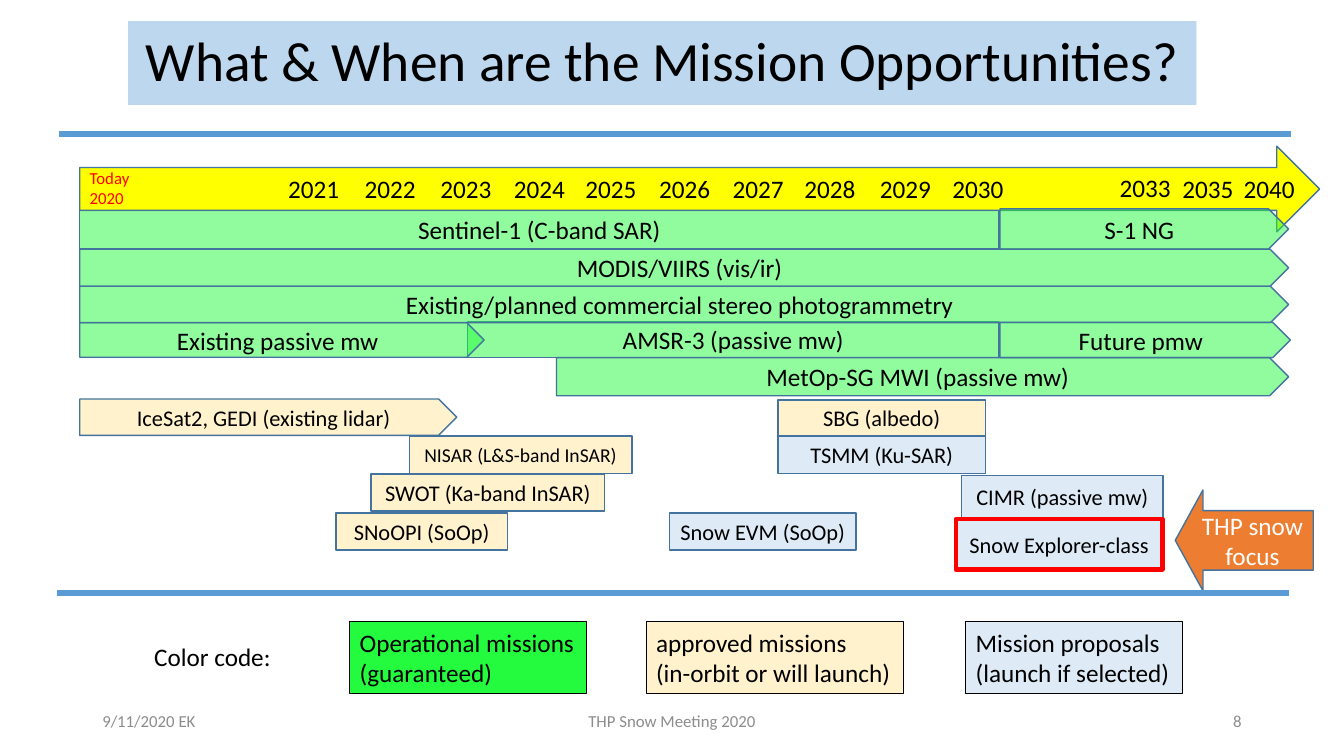
from dataclasses import dataclass
from lxml.etree import SubElement
from pptx import Presentation
from pptx.dml.color import RGBColor
from pptx.enum.shapes import MSO_CONNECTOR, MSO_SHAPE
from pptx.enum.text import MSO_ANCHOR, PP_ALIGN
from pptx.oxml.ns import qn
from pptx.util import Pt


@dataclass(frozen=True)
class Theme:
    font: str = "Calibri"
    black: str = "000000"
    white: str = "FFFFFF"
    red: str = "FF0000"
    gray: str = "8C8C8C"
    green: str = "25FB3E"
    cream: str = "FFF2CC"
    pale: str = "DEEBF7"
    sky: str = "BDD7EE"
    yellow: str = "FFFF00"
    orange: str = "ED7D31"
    edge: str = "43739E"
    rule: str = "5B9BD5"
    head: float = 39.6
    body: float = 18
    box: float = 16
    tight: float = 14
    small: float = 12


class Board:
    def __init__(self, slide, theme):
        self.slide, self.theme = slide, theme

    def text(self, shape, words, size, color=None, align=PP_ALIGN.CENTER,
             anchor=MSO_ANCHOR.MIDDLE, wrap=True, space=None):
        frame = shape.text_frame
        frame.text = words
        for key, value in {"word_wrap": wrap, "vertical_anchor": anchor}.items():
            setattr(frame, key, value)
        style = {"name": self.theme.font, "size": Pt(size)}
        for para in frame.paragraphs:
            para.alignment = align
            if space:
                para.line_spacing = space
            for key, value in style.items():
                setattr(para.font, key, value)
            para.font.color.rgb = RGBColor.from_string(color or self.theme.black)

    def shape(self, kind, at, fill, edge=None, width=1, alpha=None):
        item = self.slide.shapes.add_shape(kind, *map(Pt, at))
        item.shadow.inherit = False
        item.fill.solid()
        item.fill.fore_color.rgb = RGBColor.from_string(fill)
        if alpha:
            tone = item.element.spPr.find(qn("a:solidFill"))[0]
            SubElement(tone, qn("a:alpha")).set("val", str(alpha * 1000))
        if edge:
            item.line.color.rgb = RGBColor.from_string(edge)
            item.line.width = Pt(width)
        else:
            item.line.fill.background()
        return item

    def bar(self, kind, at, words):
        item = self.shape(kind, at, self.theme.green, self.theme.edge, alpha=50)
        self.text(item, words, self.theme.body)

    def label(self, at, words, size, **look):
        item = self.slide.shapes.add_textbox(*map(Pt, at))
        self.text(item, words, size, **look)

    def line(self, x, y, width):
        item = self.slide.shapes.add_connector(
            MSO_CONNECTOR.STRAIGHT, Pt(x), Pt(y), Pt(x + width), Pt(y))
        item.line.color.rgb = RGBColor.from_string(self.theme.rule)
        item.line.width = Pt(4.5)
        SubElement(item.element.spPr, qn("a:effectLst"))


def main():
    deck = Presentation()
    deck.slide_width, deck.slide_height = Pt(960), Pt(540)
    theme = Theme()
    board = Board(deck.slides.add_slide(deck.slide_layouts[6]), theme)
    rect, pent = MSO_SHAPE.RECTANGLE, MSO_SHAPE.PENTAGON
    left = 57
    plain = {"align": PP_ALIGN.LEFT, "anchor": MSO_ANCHOR.TOP, "wrap": False}

    # Title and footer
    title = board.shape(rect, (91.5, 15.2, 763, 59.8), theme.sky)
    board.text(title, "What & When are the Mission Opportunities?",
               theme.head, space=0.9)
    for x, width, words, align in (
            (66, 216, "9/11/2020 EK", PP_ALIGN.LEFT),
            (318, 324, "THP Snow Meeting 2020", PP_ALIGN.CENTER),
            (678, 216, "8", PP_ALIGN.RIGHT)):
        board.label((x, 500.5, width, 28.8), words, theme.small,
                    color=theme.gray, align=align)

    # Time arrow with years
    board.shape(MSO_SHAPE.RIGHT_ARROW, (left, 104.4, 885.6, 61.2),
                theme.yellow, theme.edge)
    board.label((left, 116, 43, 39), "Today\n2020", theme.small,
                color=theme.red, **plain)
    spots = (198.7, 253.4, 307.4, 360, 411.1, 463.7, 516.2, 567.4, 621.4,
             673.2, 792.7, 837.4, 881.3)
    for year, x in zip((*range(2021, 2031), 2033, 2035, 2040), spots):
        y = 119.5 if year == 2033 else 120.2
        board.label((x, y, 51, 28.8), str(year), theme.body, **plain)

    # Operational missions
    for kind, x, y, width, height, words in (
            (rect, 334, 230, 379.5, 25.2, "AMSR-3 (passive mw)"),
            (rect, left, 150.5, 656.5, 27.4, "Sentinel-1 (C-band SAR)"),
            (pent, left, 178, 863.5, 26.5, "MODIS/VIIRS (vis/ir)"),
            (pent, left, 204.5, 863.5, 26,
             "Existing/planned commercial stereo photogrammetry"),
            (pent, 714.3, 230.2, 207.4, 25.2, "Future pmw"),
            (pent, 397.5, 255.5, 523, 27.2, "MetOp-SG MWI (passive mw)"),
            (pent, 714.3, 149.2, 206.2, 28.8, "S-1 NG"),
            (pent, left, 230.6, 288.8, 24.6, "Existing passive mw")):
        board.bar(kind, (x, y, width, height), words)

    # Approved missions and proposals
    wide, slim = theme.box, theme.tight
    for kind, x, y, width, height, fill, size, words in (
            (pent, left, 285, 269.3, 26, theme.cream, wide,
             "IceSat2, GEDI (existing lidar)"),
            (rect, 240, 366.4, 122.4, 26.6, theme.cream, wide, "SNoOPI (SoOp)"),
            (rect, 292.4, 311.5, 159, 26.6, theme.cream, slim,
             "NISAR (L&S-band InSAR)"),
            (rect, 265, 338.6, 167, 26.6, theme.cream, wide,
             "SWOT (Ka-band InSAR)"),
            (rect, 478.2, 366.4, 133.2, 26.6, theme.pale, wide,
             "Snow EVM (SoOp)"),
            (rect, 555.6, 311.2, 148.4, 27, theme.pale, wide, "TSMM (Ku-SAR)"),
            (rect, 555.6, 285.8, 148.4, 25.6, theme.cream, wide,
             "SBG (albedo)"),
            (rect, 686.9, 339.8, 144, 30.4, theme.pale, wide,
             "CIMR (passive mw)")):
        item = board.shape(kind, (x, y, width, height), fill, theme.edge)
        board.text(item, words, size)

    # Focus mission and its arrow
    item = board.shape(rect, (682.6, 370.8, 147.8, 36), theme.pale, theme.red, 3)
    board.text(item, "Snow Explorer-class", wide)
    arrow = board.shape(MSO_SHAPE.LEFT_ARROW, (839.5, 350, 98.6, 72),
                        theme.orange, theme.edge)
    arrow.adjustments[0], arrow.adjustments[1] = 0.59, 0.275
    board.text(arrow, "THP snow focus", theme.body, theme.white)

    # Color code
    board.label((103, 454.3, 98.6, 28.8), "Color code:", theme.body, **plain)
    for x, width, fill, words in (
            (249.8, 169.2, theme.green, "Operational missions\n(guaranteed)"),
            (461.5, 183.6, theme.cream,
             "approved missions\n(in-orbit or will launch)"),
            (689.8, 154.8, theme.pale,
             "Mission proposals\n(launch if selected)")):
        item = board.shape(rect, (x, 444.2, width, 51), fill, theme.black, 0.75)
        board.text(item, words, theme.body, **plain)

    # Rules
    for x, y in ((41, 423.4), (42.5, 95.8)):
        board.line(x, y, 879.5)

    deck.save("out.pptx")


if __name__ == "__main__":
    main()
